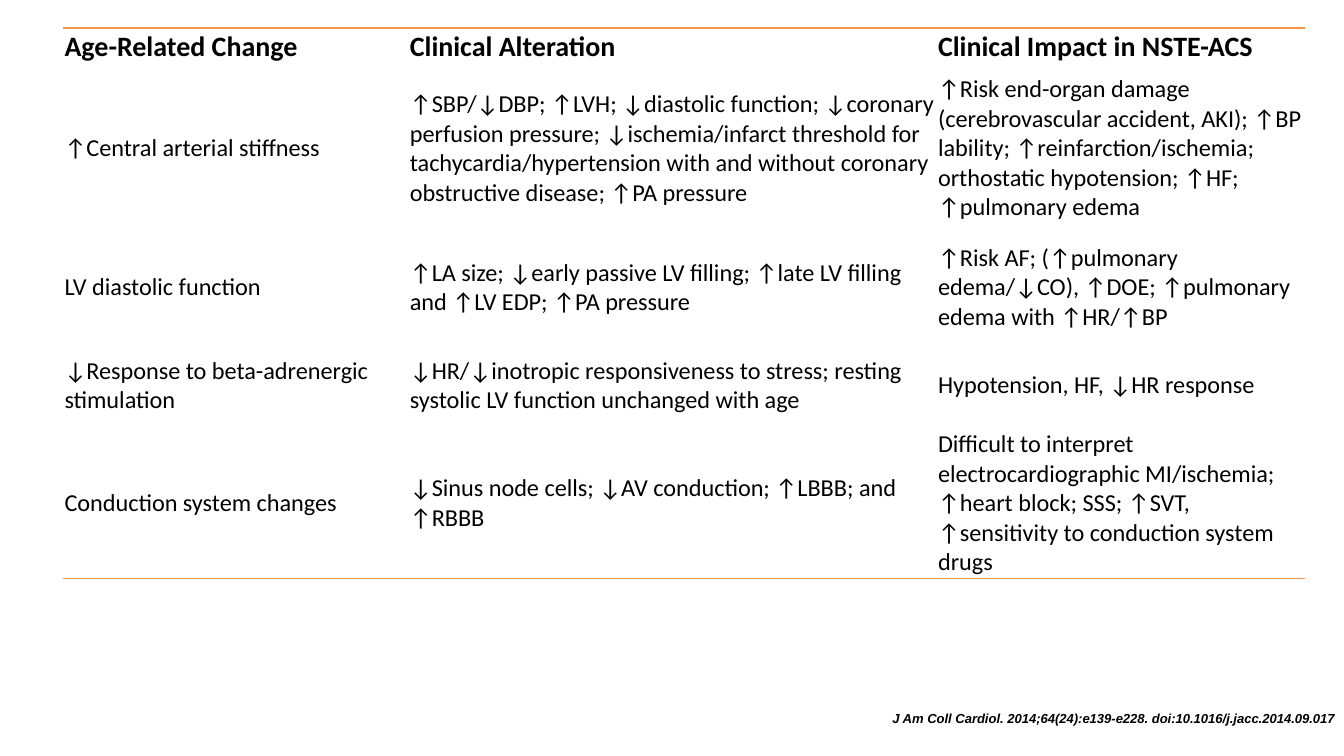
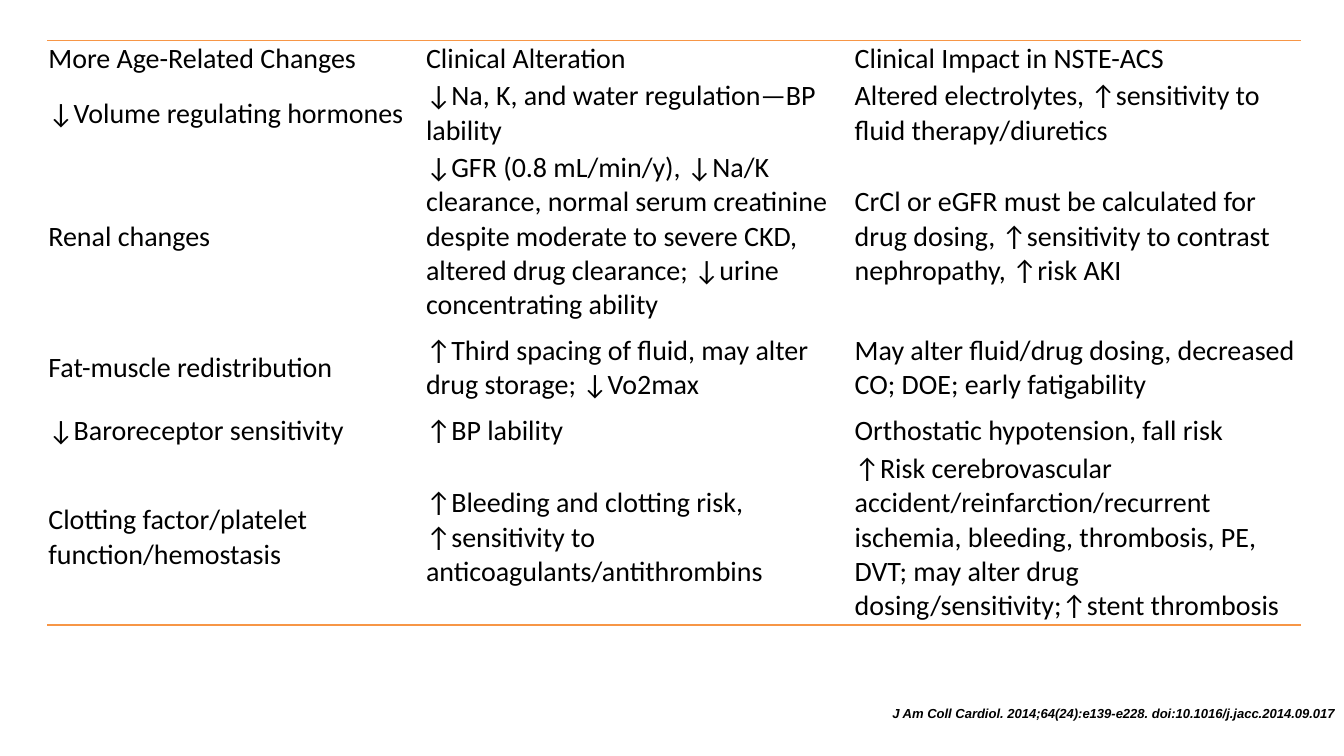
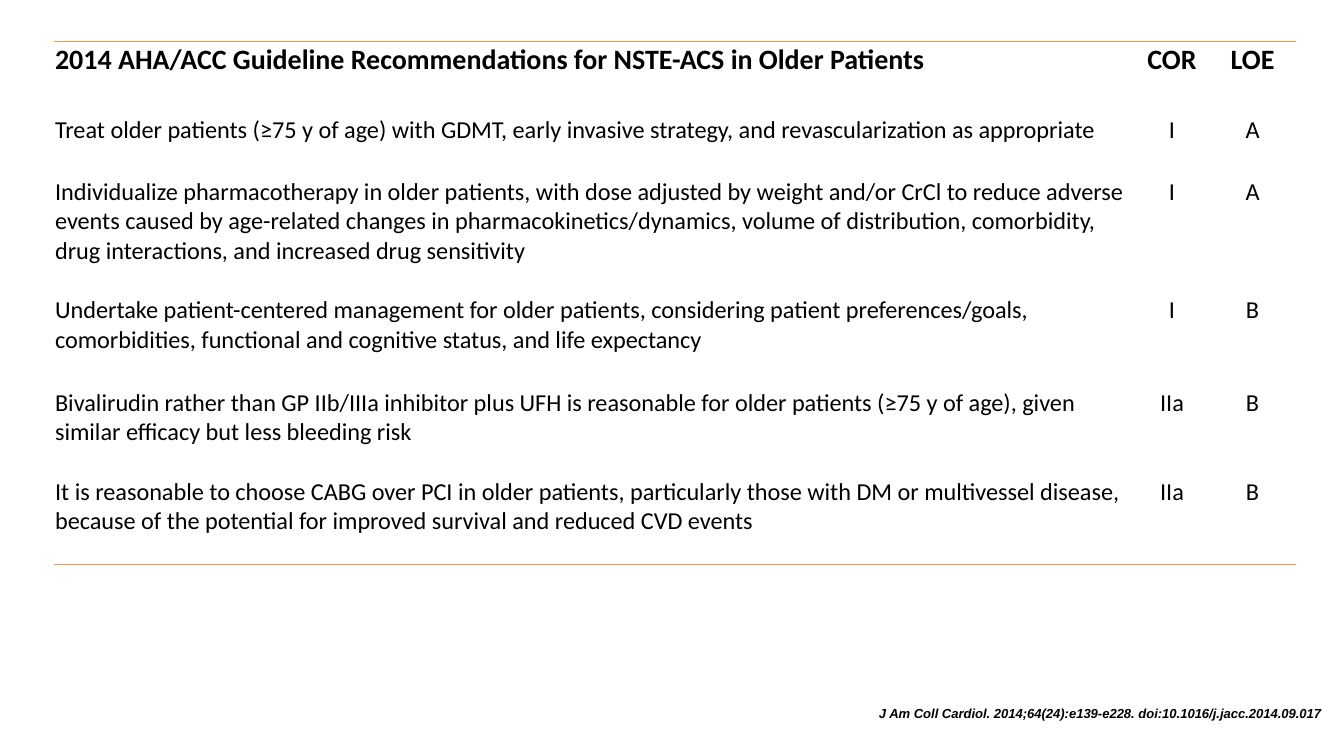
from lxml import etree
from pptx import Presentation
from pptx import util as u
from pptx.dml.color import RGBColor
from pptx.enum import text
from pptx.oxml.ns import qn

COLORS = {"ink": "000000", "rule": "F79646"}
GRID = u.Inches(0.01)
SLIDE_COLS = 1000
SLIDE_ROWS = SLIDE_COLS * 9 / 16
CELL_INSET = 1
HEAD_SIZE, BODY_SIZE = 15, 13
PLAIN_TABLE = "{2D5ABB26-0587-4C30-8999-92F81FD0307C}"
CITATION = "J Am Coll Cardiol. 2014;64(24):e139-e228. doi:10.1016/j.jacc.2014.09.017"
MIDDLE, TOP = text.MSO_ANCHOR.MIDDLE, text.MSO_ANCHOR.TOP
LEFT, CENTER, RIGHT = text.PP_ALIGN.LEFT, text.PP_ALIGN.CENTER, text.PP_ALIGN.RIGHT

ARTERIAL_CHANGES = [
    ["Age-Related Change", "Clinical Alteration", "Clinical Impact in NSTE-ACS"],
    ["↑Central arterial stiffness",
     "↑SBP/↓DBP; ↑LVH; ↓diastolic function; ↓coronary perfusion pressure; "
     "↓ischemia/infarct threshold for tachycardia/hypertension with and without "
     "coronary obstructive disease; ↑PA pressure",
     "↑Risk end-organ damage (cerebrovascular accident, AKI); ↑BP lability; "
     "↑reinfarction/ischemia; orthostatic hypotension; ↑HF; ↑pulmonary edema"],
    ["LV diastolic function",
     "↑LA size; ↓early passive LV filling; ↑late LV filling and ↑LV EDP; ↑PA pressure",
     "↑Risk AF; (↑pulmonary edema/↓CO), ↑DOE; ↑pulmonary edema with ↑HR/↑BP"],
    ["↓Response to beta-adrenergic stimulation",
     "↓HR/↓inotropic responsiveness to stress; resting systolic LV function "
     "unchanged with age",
     "Hypotension, HF, ↓HR response"],
    ["Conduction system changes",
     "↓Sinus node cells; ↓AV conduction; ↑LBBB; and ↑RBBB",
     "Difficult to interpret electrocardiographic MI/ischemia; ↑heart block; SSS; "
     "↑SVT, ↑sensitivity to conduction system drugs"],
]

MORE_CHANGES = [
    ["More Age-Related Changes", "Clinical Alteration", "Clinical Impact in NSTE-ACS"],
    ["↓Volume regulating hormones",
     "↓Na, K, and water regulation—BP lability",
     "Altered electrolytes, ↑sensitivity to fluid therapy/diuretics"],
    ["Renal changes",
     "↓GFR (0.8 mL/min/y), ↓Na/K clearance, normal serum creatinine despite moderate "
     "to severe CKD, altered drug clearance; ↓urine concentrating ability",
     "CrCl or eGFR must be calculated for drug dosing, ↑sensitivity to contrast "
     "nephropathy, ↑risk AKI"],
    ["Fat-muscle redistribution",
     "↑Third spacing of fluid, may alter drug storage; ↓Vo2max",
     "May alter fluid/drug dosing, decreased CO; DOE; early fatigability"],
    ["↓Baroreceptor sensitivity", "↑BP lability", "Orthostatic hypotension, fall risk"],
    ["Clotting factor/platelet function/hemostasis",
     "↑Bleeding and clotting risk, ↑sensitivity to anticoagulants/antithrombins",
     "↑Risk cerebrovascular accident/reinfarction/recurrent ischemia, bleeding, "
     "thrombosis, PE, DVT; may alter drug dosing/sensitivity;↑stent thrombosis"],
]

RECOMMENDATIONS = [
    ["2014 AHA/ACC Guideline Recommendations for NSTE-ACS in Older Patients", "COR", "LOE"],
    ["", "", ""],
    ["Treat older patients (≥75 y of age) with GDMT, early invasive strategy, and "
     "revascularization as appropriate", "I", "A"],
    ["Individualize pharmacotherapy in older patients, with dose adjusted by weight "
     "and/or CrCl to reduce adverse events caused by age-related changes in "
     "pharmacokinetics/dynamics, volume of distribution, comorbidity, drug "
     "interactions, and increased drug sensitivity", "I", "A"],
    ["Undertake patient-centered management for older patients, considering patient "
     "preferences/goals, comorbidities, functional and cognitive status, and life "
     "expectancy", "I", "B"],
    ["Bivalirudin rather than GP IIb/IIIa inhibitor plus UFH is reasonable for older "
     "patients (≥75 y of age), given similar efficacy but less bleeding risk",
     "IIa", "B"],
    ["It is reasonable to choose CABG over PCI in older patients, particularly those "
     "with DM or multivessel disease, because of the potential for improved survival "
     "and reduced CVD events", "IIa", "B"],
]


def on_grid(*lengths):
    return [int(length * GRID) for length in lengths]


def write(paragraph, wording, size, font="Calibri", bold=False, italic=False, align=LEFT):
    paragraph.alignment = align
    run = paragraph.add_run()
    run.text = wording
    run.font.name = font
    run.font.size = u.Pt(size)
    run.font.bold = bold
    run.font.italic = italic
    run.font.color.rgb = RGBColor.from_string(COLORS["ink"])


def rule_cell(cell, ruled_side):
    properties = cell._tc.get_or_add_tcPr()
    for side in "BTRL":
        line = etree.Element(qn(f"a:ln{side}"), w=str(u.Pt(1)))
        if side == ruled_side:
            fill = etree.SubElement(line, qn("a:solidFill"))
            etree.SubElement(fill, qn("a:srgbClr"), val=COLORS["rule"])
        else:
            etree.SubElement(line, qn("a:noFill"))
        properties.insert(0, line)


def format_cell(cell, anchor):
    cell.fill.background()
    cell.vertical_anchor = anchor
    cell.margin_left = cell.margin_right = CELL_INSET * GRID
    cell.margin_top = cell.margin_bottom = CELL_INSET * GRID


def add_ruled_table(slide, corner, widths, heights, content, body_size=BODY_SIZE,
                    bold_head=True, body_anchor=MIDDLE, aligns=(LEFT, LEFT, LEFT)):
    frame = slide.shapes.add_table(
        len(heights), len(widths), *on_grid(*corner, sum(widths), sum(heights)))
    table = frame.table
    table.first_row = table.horz_banding = False
    table._tbl.tblPr.find(qn("a:tableStyleId")).text = PLAIN_TABLE
    for column, width in zip(table.columns, on_grid(*widths)):
        column.width = width
    for row, height in zip(table.rows, on_grid(*heights)):
        row.height = height
    ruled_sides = {0: "T", len(content) - 1: "B"}
    for r, wordings in enumerate(content):
        for c, wording in enumerate(wordings):
            cell = table.cell(r, c)
            format_cell(cell, body_anchor if r else MIDDLE)
            rule_cell(cell, ruled_sides.get(r))
            paragraph = cell.text_frame.paragraphs[0]
            if wording:
                write(paragraph, wording, body_size if r else HEAD_SIZE,
                      bold=bold_head and r == 0, align=aligns[c])
            else:
                paragraph._p.get_or_add_endParaRPr().set("sz", str(body_size * 100))
        if not any(wordings):
            table.cell(r, 0).merge(table.cell(r, len(widths) - 1))


def add_citation(slide, right, top, width, height):
    box = slide.shapes.add_textbox(*on_grid(right - width, top, width, height))
    frame = box.text_frame
    frame.word_wrap = True
    frame.margin_left = frame.margin_right = 7 * GRID
    frame.margin_top = frame.margin_bottom = 4 * GRID
    write(frame.paragraphs[0], CITATION, 7, "Arial", bold=True, italic=True, align=RIGHT)


def main():
    deck = Presentation()
    deck.slide_width, deck.slide_height = on_grid(SLIDE_COLS, SLIDE_ROWS)
    arterial, more, guideline = [
        deck.slides.add_slide(deck.slide_layouts[6]) for _ in range(3)]

    add_ruled_table(arterial, (47, 21), (257, 393, 274), (27, 124, 83, 63, 104),
                    ARTERIAL_CHANGES)
    add_citation(arterial, SLIDE_COLS, 525, 377, 37)

    add_ruled_table(more, (35, 30), (281, 319, 333), (28, 53, 130, 66, 28, 130),
                    MORE_CHANGES, body_size=HEAD_SIZE, bold_head=False)
    add_citation(more, SLIDE_COLS, 521, 363, 24)

    add_ruled_table(guideline, (40, 31), (804, 56, 64), (27, 27, 46, 88, 69, 66, 66),
                    RECOMMENDATIONS, body_anchor=TOP, aligns=(LEFT, CENTER, CENTER))
    add_citation(guideline, SLIDE_COLS - 10, 521, 357, 24)

    deck.save("out.pptx")


if __name__ == "__main__":
    main()
